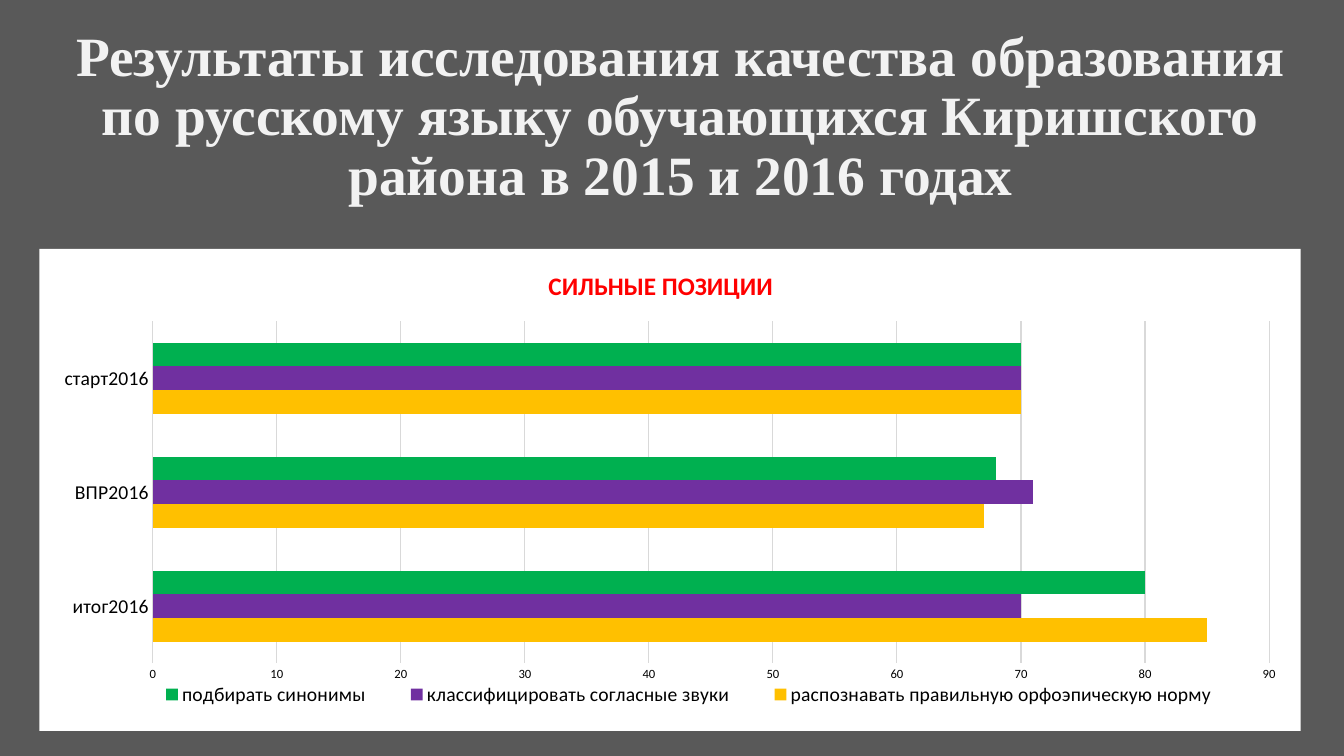
"""Build a slide comparing Russian language results in a clustered bar chart."""
from dataclasses import dataclass
from typing import Any

from lxml.etree import SubElement
from pptx import Presentation
from pptx.chart.chart import Chart
from pptx.chart.data import CategoryChartData
from pptx.dml.color import RGBColor
from pptx.enum.chart import XL_CHART_TYPE, XL_LEGEND_POSITION, XL_TICK_MARK
from pptx.enum.text import MSO_ANCHOR, PP_ALIGN
from pptx.oxml import parse_xml
from pptx.oxml.ns import nsdecls, qn
from pptx.util import Inches, Pt


@dataclass(frozen=True)
class Skill:
    name: str
    values: tuple[int, ...]
    color: str


TITLE = ("Результаты исследования качества образования по русскому языку "
         "обучающихся Киришского района в 2015 и 2016 годах")
STAGES = ("итог2016", "ВПР2016", "старт2016")
SKILLS = (
    Skill("распознавать правильную орфоэпическую норму", (85, 67, 70), "FFC000"),
    Skill("классифицировать согласные звуки", (70, 71, 70), "7030A0"),
    Skill("подбирать синонимы", (80, 68, 70), "00B050"),
)


def rgb(color: str) -> RGBColor:
    return RGBColor.from_string(color)


def set_attrs(obj: Any, **formats: Any) -> None:
    for name, value in formats.items():
        setattr(obj, name, value)


def set_font(font: Any, size: float, color: str, name: str = "Calibri", bold: bool = False) -> None:
    set_attrs(font, size=Pt(size), name=name, bold=bold)
    font.color.rgb = rgb(color)


def set_line(line: Any, color: str) -> None:
    line.color.rgb = rgb(color)
    line.width = Pt(0.75)


def place(element: Any, index: int, inner: bool = False, **fractions: float) -> None:
    """Give a chart part a fixed place, in fractions of the chart."""
    for old in element.findall(qn("c:layout")):
        element.remove(old)
    layout = parse_xml(f"<c:layout {nsdecls('c')}/>")
    manual = SubElement(layout, qn("c:manualLayout"))
    if inner:
        SubElement(manual, qn("c:layoutTarget"), val="inner")
    for key in "xy":
        SubElement(manual, qn(f"c:{key}Mode"), val="edge")
    for key, value in fractions.items():
        SubElement(manual, qn(f"c:{key}"), val=str(value))
    element.insert(index, layout)


def add_title(slide: Any) -> None:
    sp = slide.shapes.add_textbox(Inches(0.61), Inches(0.23), Inches(12.28), Inches(1.88))
    tf = sp.text_frame
    set_attrs(tf, word_wrap=True, vertical_anchor=MSO_ANCHOR.MIDDLE)
    p = tf.paragraphs[0]
    set_attrs(p, alignment=PP_ALIGN.CENTER, line_spacing=0.9)
    r = p.add_run()
    r.text = TITLE
    set_font(r.font, 39.6, "F2F2F2", "Times New Roman", True)


def format_axes(chart: Chart) -> None:
    for axis, size in ((chart.category_axis, 14), (chart.value_axis, 9)):
        set_attrs(axis, major_tick_mark=XL_TICK_MARK.NONE, minor_tick_mark=XL_TICK_MARK.NONE)
        set_font(axis.tick_labels.font, size, "000000")
    set_line(chart.category_axis.format.line, "D9D9D9")
    values = chart.value_axis
    set_attrs(values, minimum_scale=0, maximum_scale=90, major_unit=10, has_major_gridlines=True)
    values.format.line.fill.background()
    set_line(values.major_gridlines.format.line, "D9D9D9")


def add_chart(slide: Any) -> None:
    data = CategoryChartData()
    data.categories = STAGES
    for skill in SKILLS:
        data.add_series(skill.name, skill.values)
    chart = slide.shapes.add_chart(
        XL_CHART_TYPE.BAR_CLUSTERED, Inches(0.39), Inches(2.47), Inches(12.51), Inches(4.78), data).chart
    set_font(chart.font, 10, "000000")
    space = chart._chartSpace
    space.find(qn("c:txPr")).addprevious(parse_xml(
        f'<c:spPr {nsdecls("c", "a")}><a:solidFill><a:srgbClr val="FFFFFF"/></a:solidFill>'
        "<a:ln><a:noFill/></a:ln></c:spPr>"))

    plot = chart.plots[0]
    set_attrs(plot, gap_width=182, overlap=0, vary_by_categories=False)
    for series, skill in zip(plot.series, SKILLS):
        series.format.fill.solid()
        series.format.fill.fore_color.rgb = rgb(skill.color)
    format_axes(chart)

    chart.has_title = True
    r = chart.chart_title.text_frame.paragraphs[0].add_run()
    r.text = "СИЛЬНЫЕ ПОЗИЦИИ"
    set_font(r.font, 18, "FF0000", bold=True)
    chart.has_legend = True
    set_attrs(chart.legend, position=XL_LEGEND_POSITION.BOTTOM, include_in_layout=False)
    set_font(chart.legend.font, 14, "000000")

    place(space.find(".//" + qn("c:title")), 1, x=0.4, y=0.03)
    place(space.find(".//" + qn("c:plotArea")), 0, inner=True, x=0.09, y=0.15, w=0.885, h=0.71)
    place(space.find(".//" + qn("c:legend")), 1, x=0.07, y=0.89, w=0.89, h=0.07)


def main() -> None:
    prs = Presentation()
    set_attrs(prs, slide_width=Inches(13.33), slide_height=Inches(7.5))
    s = prs.slides.add_slide(prs.slide_layouts[6])
    s.background.fill.solid()
    s.background.fill.fore_color.rgb = rgb("595959")
    add_title(s)
    add_chart(s)
    prs.save("out.pptx")


if __name__ == "__main__":
    main()
